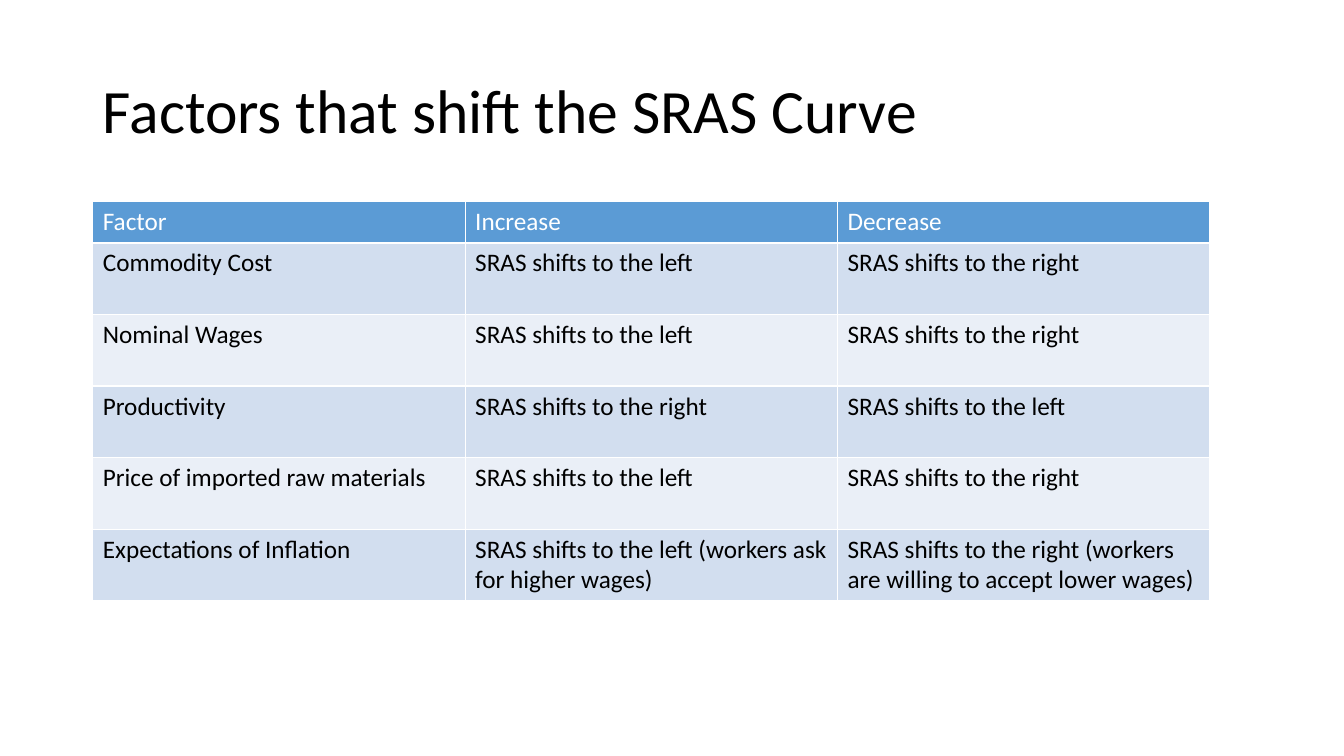
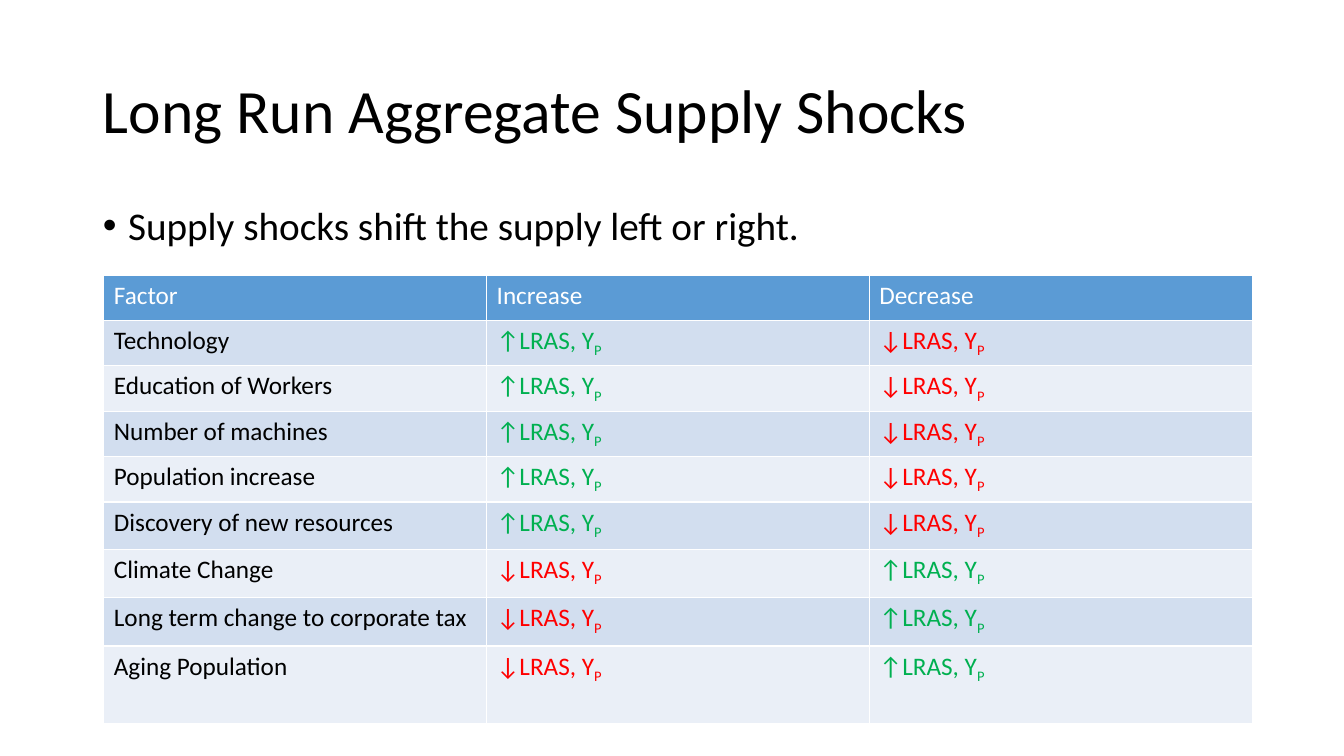
from dataclasses import dataclass

from lxml import etree
from pptx import Presentation
from pptx.dml.color import RGBColor
from pptx.enum import text
from pptx.oxml import ns
from pptx.util import Inches, Pt


@dataclass(frozen=True)
class Theme:
    font: str = "Calibri"
    title_size: int = 44
    body_size: int = 28
    table_size: int = 18
    ink: str = "000000"
    white: str = "FFFFFF"
    header: str = "5B9BD5"
    bands: tuple = ("D2DEEF", "EAEFF7")
    rise: str = "00B050"
    fall: str = "FF0000"
    border: float = 1


THEME = Theme()
HEADINGS = ("Factor", "Increase", "Decrease")
LEFT, RIGHT = "SRAS shifts to the left", "SRAS shifts to the right"
UP, DOWN = "↑LRAS, Y", "↓LRAS, Y"
SUBSCRIPTS = {UP: "P", DOWN: "P"}
TEXT_COLORS = {UP: THEME.rise, DOWN: THEME.fall}

SLIDES = [
    {
        "title": "Factors that shift the SRAS Curve",
        "body": None,
        "table_at": (0.92, 2, 11.08),
        "row_heights": [0.41] + [0.71] * 5,
        "rows": [
            ("Commodity Cost", LEFT, RIGHT),
            ("Nominal Wages", LEFT, RIGHT),
            ("Productivity", RIGHT, LEFT),
            ("Price of imported raw materials", LEFT, RIGHT),
            ("Expectations of Inflation",
             LEFT + " (workers ask for higher wages)",
             RIGHT + " (workers are willing to accept lower wages)"),
        ],
    },
    {
        "title": "Long Run Aggregate Supply Shocks",
        "body": "Supply shocks shift the supply left or right.",
        "table_at": (1.03, 2.73, 11.39),
        "row_heights": [0.45] * 5 + [0.47, 0.48, 0.48, 0.77],
        "rows": [
            ("Technology", UP, DOWN),
            ("Education of Workers", UP, DOWN),
            ("Number of machines", UP, DOWN),
            ("Population increase", UP, DOWN),
            ("Discovery of new resources", UP, DOWN),
            ("Climate Change", DOWN, UP),
            ("Long term change to corporate tax", DOWN, UP),
            ("Aging Population", DOWN, UP),
        ],
    },
]


def style_run(run, size, color):
    font = run.font
    font.name, font.size, font.bold = THEME.font, Pt(size), False
    font.color.rgb = RGBColor.from_string(color)


def fill_placeholder(shape, wording, box, size, anchor):
    shape.left, shape.top, shape.width, shape.height = map(Inches, box)
    frame = shape.text_frame
    frame.text = wording
    frame.word_wrap = True
    frame.auto_size = text.MSO_AUTO_SIZE.NONE
    frame.vertical_anchor = anchor
    paragraph = frame.paragraphs[0]
    paragraph.alignment = text.PP_ALIGN.LEFT
    paragraph.line_spacing = 0.9
    paragraph.space_before = Pt(0)
    style_run(paragraph.runs[0], size, THEME.ink)
    return paragraph


def add_bullet(paragraph):
    properties = paragraph._p.get_or_add_pPr()
    properties.set("marL", str(Inches(0.25)))
    properties.set("indent", str(-Inches(0.25)))
    etree.SubElement(properties, ns.qn("a:buFont")).set("typeface", "Arial")
    etree.SubElement(properties, ns.qn("a:buChar")).set("char", "•")


def add_borders(cell):
    properties = cell._tc.get_or_add_tcPr()
    for index, side in enumerate(("lnL", "lnR", "lnT", "lnB")):
        line = etree.Element(ns.qn("a:" + side), w=str(Pt(THEME.border)))
        fill = etree.SubElement(line, ns.qn("a:solidFill"))
        etree.SubElement(fill, ns.qn("a:srgbClr")).set("val", THEME.white)
        properties.insert(index, line)


def fill_cell(cell, wording, fill, color):
    cell.fill.solid()
    cell.fill.fore_color.rgb = RGBColor.from_string(fill)
    add_borders(cell)
    cell.text_frame.text = wording
    paragraph = cell.text_frame.paragraphs[0]
    if wording in SUBSCRIPTS:
        subscript = paragraph.add_run()
        subscript.text = SUBSCRIPTS[wording]
        subscript._r.get_or_add_rPr().set("baseline", "-25000")
    for run in paragraph.runs:
        style_run(run, THEME.table_size, color)


def add_factor_table(slide, content):
    left, top, width = map(Inches, content["table_at"])
    heights = [Inches(height) for height in content["row_heights"]]
    rows = [HEADINGS] + content["rows"]
    table = slide.shapes.add_table(
        len(rows), len(HEADINGS), left, top, width, sum(heights)).table
    for row_index, (wordings, height) in enumerate(zip(rows, heights)):
        table.rows[row_index].height = height
        is_header = row_index == 0
        fill = THEME.header if is_header else THEME.bands[(row_index - 1) % 2]
        for column_index, wording in enumerate(wordings):
            color = THEME.white if is_header else TEXT_COLORS.get(wording, THEME.ink)
            fill_cell(table.cell(row_index, column_index), wording, fill, color)


def add_factor_slide(presentation, content):
    layout_name = "Title and Content" if content["body"] else "Title Only"
    layout = presentation.slide_layouts.get_by_name(layout_name)
    slide = presentation.slides.add_slide(layout)
    fill_placeholder(slide.shapes.title, content["title"], (0.92, 0.4, 11.5, 1.45),
                     THEME.title_size, text.MSO_ANCHOR.MIDDLE)
    if content["body"]:
        paragraph = fill_placeholder(
            slide.placeholders[1], content["body"], (0.92, 2, 11.5, 4.76),
            THEME.body_size, text.MSO_ANCHOR.TOP)
        add_bullet(paragraph)
    add_factor_table(slide, content)


def main():
    presentation = Presentation()
    presentation.slide_width, presentation.slide_height = Inches(13.33), Inches(7.5)
    for content in SLIDES:
        add_factor_slide(presentation, content)
    presentation.save("out.pptx")


if __name__ == "__main__":
    main()
